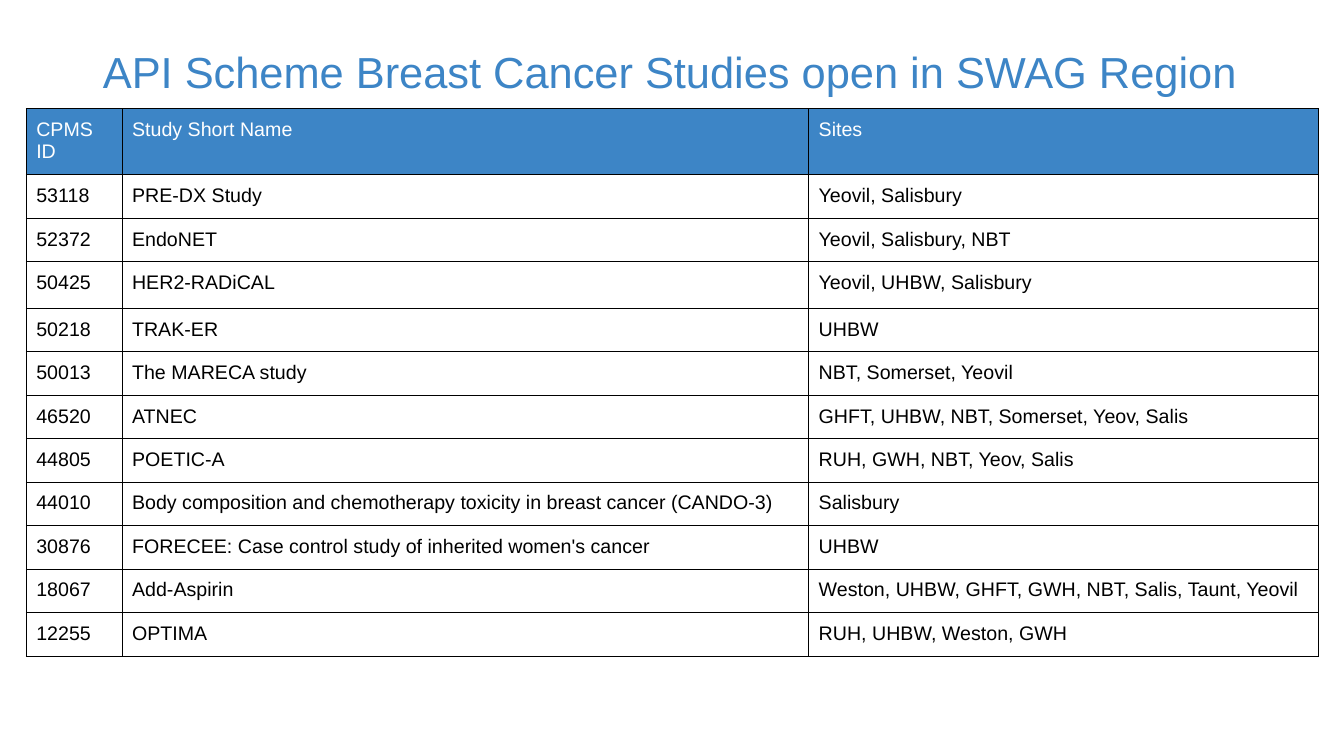
from lxml import etree
from pptx import Presentation
from pptx import util as u
from pptx.dml.color import RGBColor
from pptx.enum import text
from pptx.oxml.ns import qn

COLORS = {"blue": "3D85C6", "white": "FFFFFF", "black": "000000"}
FONT = "Arial"
SLIDE_W, SLIDE_H = u.Inches(13.33), u.Inches(7.5)
COLUMN_WIDTHS = (0.95, 6.81, 5.06)
HEADER_HEIGHT, ROW_HEIGHT = 0.65, 0.43
ROW_HEIGHTS = {0: HEADER_HEIGHT, 3: 0.46}

TITLE = "API Scheme Breast Cancer Studies open in SWAG Region"
HEADER = ("CPMS ID", "Study Short Name", "Sites")
STUDIES = [
    ("53118", "PRE-DX Study", "Yeovil, Salisbury"),
    ("52372", "EndoNET", "Yeovil, Salisbury, NBT"),
    ("50425", "HER2-RADiCAL", "Yeovil, UHBW, Salisbury"),
    ("50218", "TRAK-ER", "UHBW"),
    ("50013", "The MARECA study", "NBT, Somerset, Yeovil"),
    ("46520", "ATNEC", "GHFT, UHBW, NBT, Somerset, Yeov, Salis"),
    ("44805", "POETIC-A", "RUH, GWH, NBT, Yeov, Salis"),
    ("44010", "Body composition and chemotherapy toxicity in breast cancer (CANDO-3)",
     "Salisbury"),
    ("30876", "FORECEE: Case control study of inherited women's cancer", "UHBW"),
    ("18067", "Add-Aspirin", "Weston, UHBW, GHFT, GWH, NBT, Salis, Taunt, Yeovil"),
    ("12255", "OPTIMA", "RUH, UHBW, Weston, GWH"),
]


def rgb(name):
    return RGBColor.from_string(COLORS[name])


def add_run(p, words, size, color):
    r = p.add_run()
    r.text = words
    r.font.name, r.font.size = FONT, u.Pt(size)
    r.font.bold = False
    r.font.color.rgb = rgb(color)


def set_borders(cell, color, width):
    """Draw all four edges; they must come before the cell's fill."""
    tc_pr = cell._tc.get_or_add_tcPr()
    for edge in ("a:lnL", "a:lnR", "a:lnT", "a:lnB"):
        ln = etree.SubElement(tc_pr, qn(edge), w=str(u.Pt(width)))
        fill = etree.SubElement(ln, qn("a:solidFill"))
        etree.SubElement(fill, qn("a:srgbClr"), val=COLORS[color])


def fill_cell(cell, words, fill, color):
    cell.margin_left = cell.margin_right = u.Inches(0.1)
    cell.margin_top = cell.margin_bottom = u.Inches(0.1)
    set_borders(cell, "black", 0.75)
    cell.fill.solid()
    cell.fill.fore_color.rgb = rgb(fill)
    add_run(cell.text_frame.paragraphs[0], words, 14, color)


def place_title(s, left, top, width, height):
    sp = s.shapes.title
    sp.left, sp.top, sp.width, sp.height = left, top, width, height
    tf = sp.text_frame
    tf.word_wrap = True
    tf.auto_size = text.MSO_AUTO_SIZE.NONE
    tf.vertical_anchor = text.MSO_ANCHOR.MIDDLE
    p = tf.paragraphs[0]
    p.alignment = text.PP_ALIGN.LEFT
    p.line_spacing = 0.9
    add_run(p, TITLE, 31, "blue")


def add_studies_table(s, left, top, width, height):
    rows = [HEADER, *STUDIES]
    table = s.shapes.add_table(len(rows), len(HEADER), left, top, width, height).table
    table.horz_banding = False
    for column, share in zip(table.columns, COLUMN_WIDTHS):
        column.width = int(width * share / sum(COLUMN_WIDTHS))
    heights = [ROW_HEIGHTS.get(i, ROW_HEIGHT) for i in range(len(rows))]
    for i, values in enumerate(rows):
        table.rows[i].height = int(height * heights[i] / sum(heights))
        fill, color = ("blue", "white") if i == 0 else ("white", "black")
        for j, words in enumerate(values):
            fill_cell(table.cell(i, j), words, fill, color)


def main():
    prs = Presentation()
    prs.slide_width, prs.slide_height = SLIDE_W, SLIDE_H
    s = prs.slides.add_slide(prs.slide_layouts[5])
    place_title(s, u.Inches(0.92), u.Inches(0.4), u.Inches(11.5), u.Inches(0.68))
    add_studies_table(s, u.Inches(0.26), u.Inches(1.08),
                      u.Inches(sum(COLUMN_WIDTHS)), u.Inches(5.43))
    prs.save("out.pptx")


if __name__ == "__main__":
    main()
